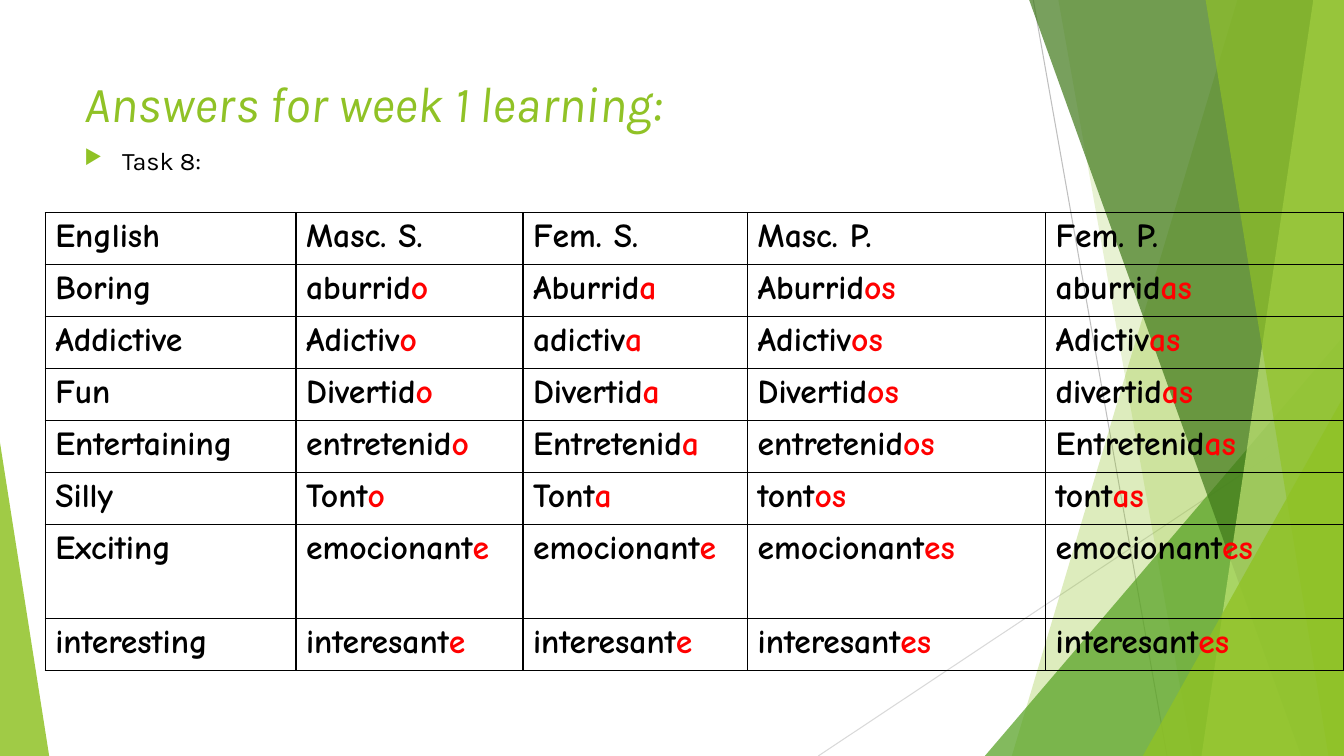
from typing import NamedTuple

from lxml import etree
from pptx import Presentation
from pptx.dml.color import RGBColor
from pptx.enum.shapes import MSO_CONNECTOR, MSO_SHAPE
from pptx.enum.text import MSO_ANCHOR
from pptx.oxml.ns import qn
from pptx.util import Cm, Pt

STRAIGHT = MSO_CONNECTOR.STRAIGHT
TRIANGLE = MSO_SHAPE.ISOSCELES_TRIANGLE
TOP = MSO_ANCHOR.TOP

SLIDE_W, SLIDE_H = 33.87, 19.05
PANEL_TOP = -0.02
GREEN, BLACK, RED = "90C226", "000000", "FF0000"
HEADING_FONT, TABLE_FONT = "Karla", "Comic Neue"


class Ray(NamedTuple):
    x1: float
    y1: float
    x2: float
    y2: float
    color: str


class Panel(NamedTuple):
    """A band from its slanted left edge to the right side of the slide."""
    top_x: float
    bottom_x: float
    color: str
    opacity: int


class Corner(NamedTuple):
    """A right triangle standing on the bottom of the slide."""
    left: float
    top: float
    width: float
    peak: float
    color: str
    opacity: int


class Adjective(NamedTuple):
    english: str
    stems: tuple[str, str, str, str]
    endings: tuple[str, str, str, str]


RAYS = [
    Ray(26.04, 0, 29.41, SLIDE_H, "BFBFBF"),
    Ray(SLIDE_W, 10.24, 20.62, SLIDE_H, "D9D9D9"),
]
FACETS = [
    Panel(31.19, 25.5, GREEN, 30),
    Panel(26.67, 30.05, GREEN, 20),
    Corner(24.82, 8.46, 9.05, 1, "54A021", 72),
    Panel(25.93, 32.79, "3F7819", 70),
    Panel(33.1, 30.28, "C0E474", 70),
    Panel(30.38, 33.48, GREEN, 65),
    Corner(28.8, 9.98, 5.07, 1, GREEN, 80),
    Corner(0, 11.15, 1.24, 0, GREEN, 85),
]

HEADINGS = ["English", "Masc. S.", "Fem. S.", "Masc. P.", "Fem. P."]
GENDERED = ("o", "a", "os", "as")
NEUTRAL = ("e", "e", "es", "es")
ADJECTIVES = [
    Adjective("Boring", ("aburrid", "Aburrid", "Aburrid", "aburrid"), GENDERED),
    Adjective("Addictive", ("Adictiv", "adictiv", "Adictiv", "Adictiv"), GENDERED),
    Adjective("Fun", ("Divertid", "Divertid", "Divertid", "divertid"), GENDERED),
    Adjective("Entertaining",
              ("entretenid", "Entretenid", "entretenid", "Entretenid"), GENDERED),
    Adjective("Silly", ("Tont", "Tont", "tont", "tont"), GENDERED),
    Adjective("Exciting", ("emocionant",) * 4, NEUTRAL),
    Adjective("interesting", ("interesant",) * 4, NEUTRAL),
]
COLUMN_WIDTHS = [6.32, 5.72, 5.66, 7.51, 7.51]
ROW_HEIGHT, TALL_ROW_HEIGHT = 1.31, 2.36


def rgb(color: str) -> RGBColor:
    return RGBColor.from_string(color)


def add_ray(shapes, ray: Ray) -> None:
    line = shapes.add_connector(
        STRAIGHT, Cm(ray.x1), Cm(ray.y1), Cm(ray.x2), Cm(ray.y2))
    line.line.color.rgb = rgb(ray.color)
    line.line.width = Pt(0.75)
    etree.SubElement(line._element.spPr, qn("a:effectLst"))


def add_facet(shapes, facet: Panel | Corner) -> None:
    if isinstance(facet, Panel):
        builder = shapes.build_freeform(Cm(facet.top_x), Cm(PANEL_TOP))
        builder.add_line_segments([
            (Cm(SLIDE_W), Cm(PANEL_TOP)),
            (Cm(SLIDE_W), Cm(SLIDE_H)),
            (Cm(facet.bottom_x), Cm(SLIDE_H)),
        ], close=True)
        shape = builder.convert_to_shape()
    else:
        shape = shapes.add_shape(
            TRIANGLE, Cm(facet.left), Cm(facet.top),
            Cm(facet.width), Cm(SLIDE_H - facet.top))
        shape.adjustments[0] = facet.peak
    shape.shadow.inherit = False
    shape.line.fill.background()
    shape.fill.solid()
    shape.fill.fore_color.rgb = rgb(facet.color)
    tint = shape.fill._xPr.find(qn("a:solidFill"))[0]
    etree.SubElement(tint, qn("a:alpha"), val=str(facet.opacity * 1000))


def format_run(run, font: str, size: int, color: str,
               bold: bool = False, italic: bool = False) -> None:
    run.font.name = font
    run.font.size = Pt(size)
    run.font.color.rgb = rgb(color)
    run.font.bold = bold
    run.font.italic = italic


def add_text(shapes, text: str, top: float, height: float,
             size: int, color: str, italic: bool = False):
    box = shapes.add_textbox(Cm(1.88), Cm(top), Cm(23.88), Cm(height))
    box.text_frame.word_wrap = True
    box.text_frame.vertical_anchor = TOP
    paragraph = box.text_frame.paragraphs[0]
    paragraph.text = text
    format_run(paragraph.runs[0], HEADING_FONT, size, color, italic=italic)
    return paragraph


def add_bullet(paragraph) -> None:
    paragraph.space_before = Pt(10)
    properties = paragraph._p.get_or_add_pPr()
    properties.set("marL", str(Cm(0.95)))
    properties.set("indent", str(Cm(-0.95)))
    bullet_color = etree.SubElement(properties, qn("a:buClr"))
    etree.SubElement(bullet_color, qn("a:srgbClr"), val=GREEN)
    etree.SubElement(properties, qn("a:buSzPct"), val="80000")
    etree.SubElement(properties, qn("a:buChar"), char="▶")


def add_borders(cell) -> None:
    properties = cell._tc.get_or_add_tcPr()
    for position, side in enumerate(("a:lnL", "a:lnR", "a:lnT", "a:lnB")):
        border = etree.Element(qn(side), w=str(Pt(1)))
        fill = etree.SubElement(border, qn("a:solidFill"))
        etree.SubElement(fill, qn("a:srgbClr"), val=BLACK)
        properties.insert(position, border)


def fill_cell(cell, stem: str, ending: str = "") -> None:
    cell.fill.background()
    add_borders(cell)
    paragraph = cell.text_frame.paragraphs[0]
    for text, color in ((stem, BLACK), (ending, RED)):
        if text:
            run = paragraph.add_run()
            run.text = text
            format_run(run, TABLE_FONT, 24, color, bold=True)


def add_answers(shapes) -> None:
    heights = [TALL_ROW_HEIGHT if label == "Exciting" else ROW_HEIGHT
               for label in ["English", *(word.english for word in ADJECTIVES)]]
    answers = shapes.add_table(
        len(heights), len(HEADINGS), Cm(1.14), Cm(5.36),
        Cm(sum(COLUMN_WIDTHS)), Cm(sum(heights))).table
    answers.first_row = answers.horz_banding = False
    for column, width in zip(answers.columns, COLUMN_WIDTHS):
        column.width = Cm(width)
    for row, height in zip(answers.rows, heights):
        row.height = Cm(height)

    for column, heading in enumerate(HEADINGS):
        fill_cell(answers.cell(0, column), heading)
    for row, word in enumerate(ADJECTIVES, start=1):
        fill_cell(answers.cell(row, 0), word.english)
        for column, form in enumerate(zip(word.stems, word.endings), start=1):
            fill_cell(answers.cell(row, column), *form)


def main() -> None:
    deck = Presentation()
    deck.slide_width, deck.slide_height = Cm(SLIDE_W), Cm(SLIDE_H)
    shapes = deck.slides.add_slide(deck.slide_layouts[6]).shapes

    # Green facets
    for ray in RAYS:
        add_ray(shapes, ray)
    for facet in FACETS:
        add_facet(shapes, facet)

    # Title and task
    add_text(shapes, "Answers for week 1 learning:", 1.7, 3.66, 36, GREEN, italic=True)
    add_bullet(add_text(shapes, "Task 8:", 3.53, 10.77, 18, BLACK))

    # Answer table
    add_answers(shapes)
    deck.save("out.pptx")


if __name__ == "__main__":
    main()
